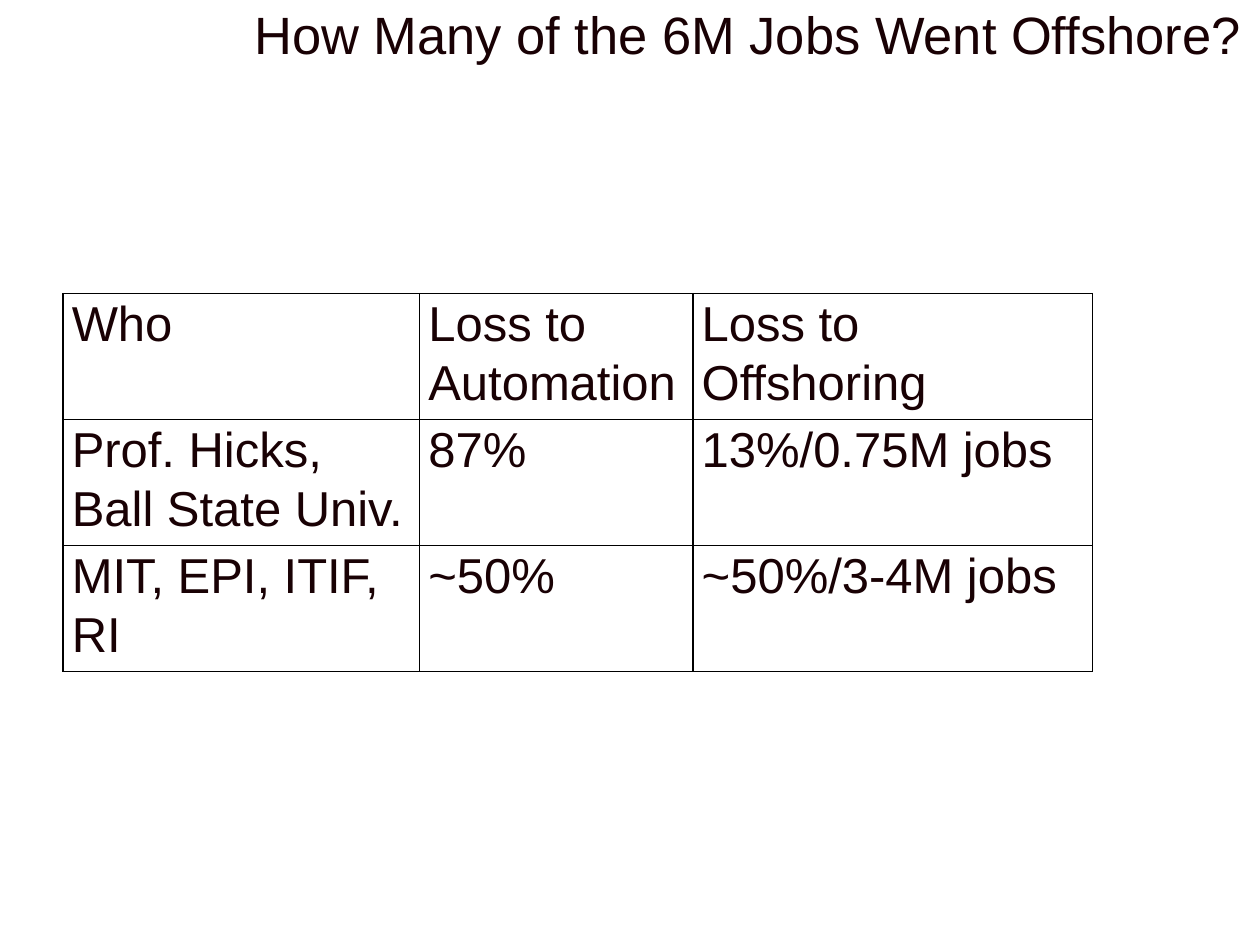
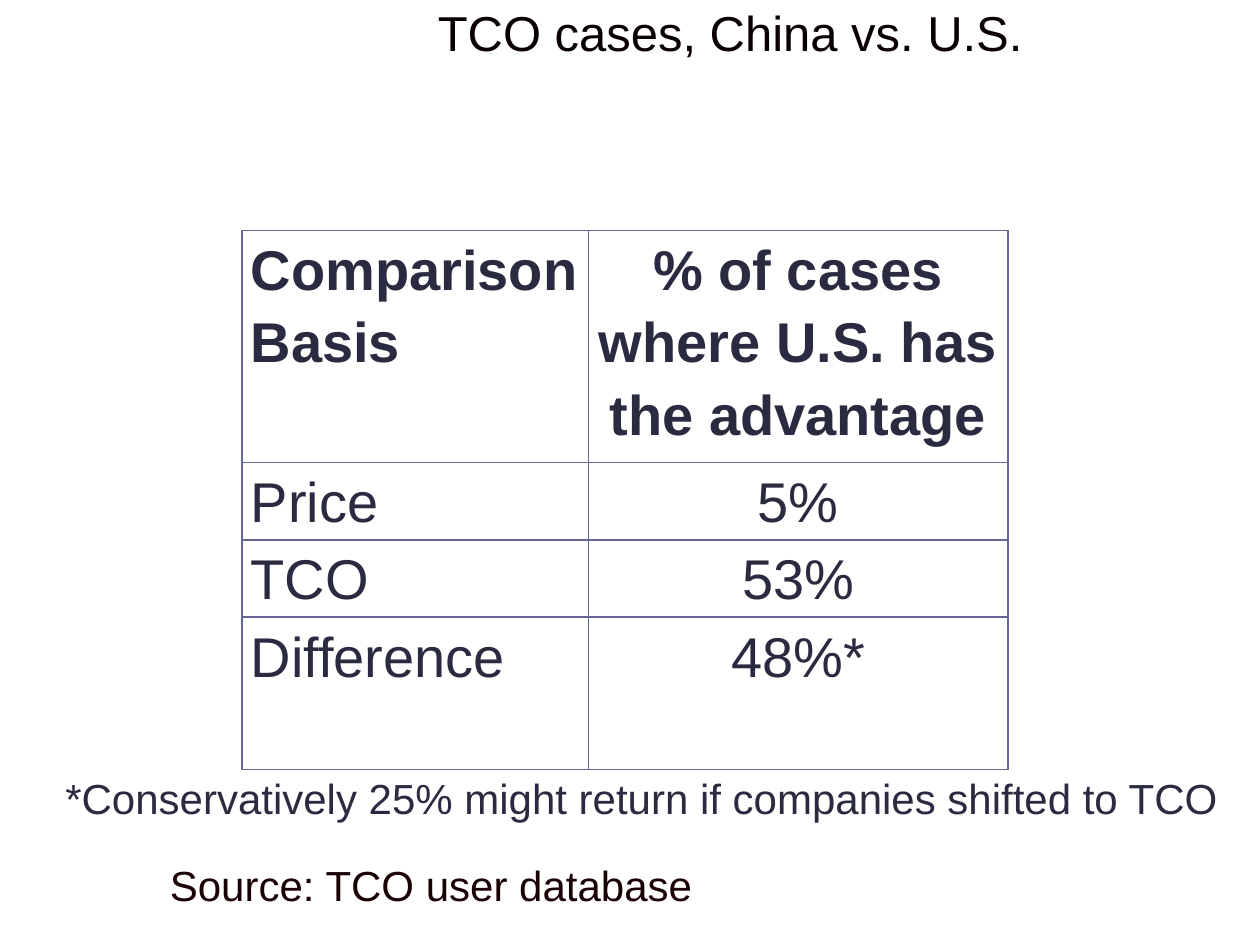
"""Build two slides on offshored jobs and total cost of ownership."""
from lxml import etree
from pptx import Presentation
from pptx.dml.color import RGBColor
from pptx.enum.text import MSO_ANCHOR, PP_ALIGN
from pptx.oxml.ns import qn
from pptx.util import Inches, Pt

LEFT, CENTER = PP_ALIGN.LEFT, PP_ALIGN.CENTER
MIDDLE, TOP = MSO_ANCHOR.MIDDLE, MSO_ANCHOR.TOP
FONT = "Arial"
WIDE, HIGH = 10, 7.5
INSET = 0.07
HEX = {"ink": "190104", "black": "080001", "slate": "2A2A40",
       "line": "000000", "rule": "666699"}

SLIDES = [
    {
        "title": ("How Many of the 6M Jobs Went Offshore?",
                  (1.79, -0.25, 8.29, 1.03), 30, "ink"),
        "table": {
            "at": (0.5, 2.33), "cols": [2.83, 2.17, 3.17], "rows": [0.93] * 3,
            "size": 28, "ink": "ink", "rule": "line", "space": 1.07,
            "bold": False, "align": [LEFT] * 3,
            "cells": [
                ("Who", "Loss to Automation", "Loss to Offshoring"),
                ("Prof. Hicks, Ball State Univ.", "87%", "13%/0.75M jobs"),
                ("MIT, EPI, ITIF, RI", "~50%", "~50%/3-4M jobs"),
            ],
        },
        "notes": [],
    },
    {
        "title": ("TCO cases, China vs. U.S.",
                  (1.67, -0.25, 8.25, 1), 28, "black"),
        "table": {
            "at": (1.92, 1.83), "cols": [2.75, 3.33],
            "rows": [1.61, 0.61, 0.61, 1.21],
            "size": 32, "ink": "slate", "rule": "rule", "space": 1.15,
            "bold": True, "align": [LEFT, CENTER],
            "cells": [
                ("Comparison Basis", "% of cases where U.S. has the advantage"),
                ("Price", "5%"),
                ("TCO", "53%"),
                ("Difference", "48%*"),
            ],
        },
        "notes": [
            ("*Conservatively 25% might return if companies shifted to TCO",
             (0.42, 6.08, 9.44, 0.5), 24, "slate"),
            ("Source: TCO user database", (1.25, 6.77, 4.39, 0.51), 24, "ink"),
        ],
    },
]


def style(frame, size, ink, align=LEFT, bold=False):
    para = frame.paragraphs[0]
    para.alignment = align
    for run in para.runs:
        font = run.font
        font.name, font.size, font.bold = FONT, Pt(size), bold
        font.color.rgb = RGBColor.from_string(HEX[ink])
    return para


def add_text(slide, text, box, size, ink, align=LEFT, anchor=TOP, wrap=False):
    frame = slide.shapes.add_textbox(*map(Inches, box)).text_frame
    frame.text = text
    frame.word_wrap = wrap
    frame.vertical_anchor = anchor
    style(frame, size, ink, align)


def add_lines(cell, rule):
    props = cell._tc.get_or_add_tcPr()
    for side in ("a:lnL", "a:lnR", "a:lnT", "a:lnB"):
        line = etree.SubElement(props, qn(side), w=str(Pt(1)))
        fill = etree.SubElement(line, qn("a:solidFill"))
        etree.SubElement(fill, qn("a:srgbClr"), val=HEX[rule])


def add_grid(slide, spec):
    cols, rows = spec["cols"], spec["rows"]
    box = (*spec["at"], sum(cols), sum(rows))
    grid = slide.shapes.add_table(len(rows), len(cols), *map(Inches, box)).table
    grid.first_row = grid.horz_banding = False
    for col, width in zip(grid.columns, cols):
        col.width = Inches(width)
    for row, height in zip(grid.rows, rows):
        row.height = Inches(height)
    for r, texts in enumerate(spec["cells"]):
        for c, text in enumerate(texts):
            cell = grid.cell(r, c)
            cell.text_frame.text = text
            cell.margin_left = cell.margin_right = Inches(INSET)
            cell.margin_top = cell.margin_bottom = 0
            add_lines(cell, spec["rule"])
            cell.fill.background()
            para = style(cell.text_frame, spec["size"], spec["ink"],
                         spec["align"][c], spec["bold"] and r == 0)
            para.line_spacing = spec["space"]


def main():
    deck = Presentation()
    deck.slide_width, deck.slide_height = Inches(WIDE), Inches(HIGH)
    for page in SLIDES:
        slide = deck.slides.add_slide(deck.slide_layouts[6])
        add_text(slide, *page["title"], CENTER, MIDDLE, True)
        add_grid(slide, page["table"])
        for note in page["notes"]:
            add_text(slide, *note)
    deck.save("out.pptx")


if __name__ == "__main__":
    main()
